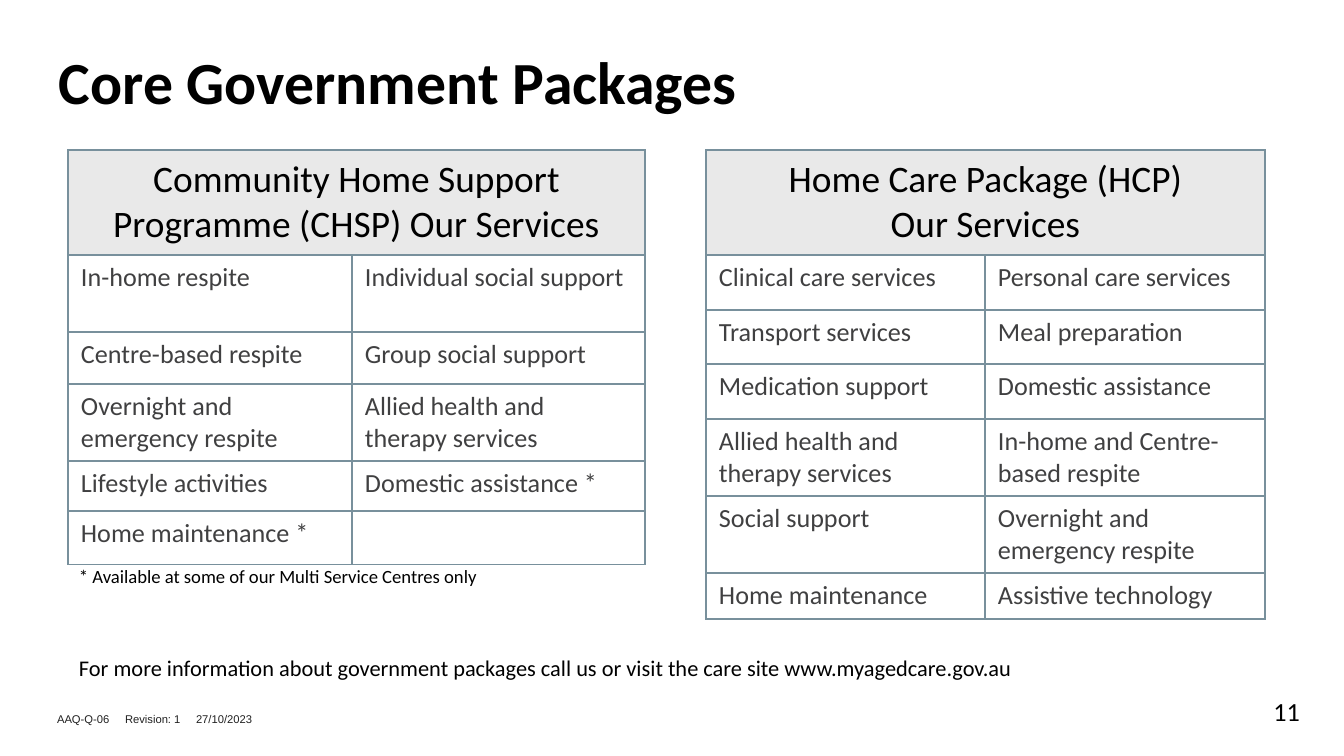
from lxml.etree import SubElement
from pptx import Presentation
from pptx.dml.color import RGBColor
from pptx.enum.text import PP_ALIGN
from pptx.oxml.ns import qn
from pptx.util import Pt

EMU_PER_PX = 914400 / 134.4
COLORS = {
    "black": "000000",
    "body": "404041",
    "footer": "212121",
    "header": "E9E9E9",
    "border": "78909C",
}
PAD, SLIM_PAD = 13, 7

CHSP_HEADER = "Community Home Support Programme (CHSP) Our Services"
CHSP_SERVICES = [
    ("In-home respite", "Individual social support"),
    ("Centre-based respite", "Group social support"),
    ("Overnight and emergency respite", "Allied health and\ntherapy services"),
    ("Lifestyle activities", "Domestic assistance *"),
    ("Home maintenance *", ""),
]
HCP_HEADER = "Home Care Package (HCP)\nOur Services"
HCP_SERVICES = [
    ("Clinical care services", "Personal care services"),
    ("Transport services", "Meal preparation"),
    ("Medication support", "Domestic assistance"),
    ("Allied health and therapy services", "In-home and Centre-based respite"),
    ("Social support", "Overnight and emergency respite"),
    ("Home maintenance", "Assistive technology"),
]


def px(length):
    return round(length * EMU_PER_PX)


def color(name):
    return RGBColor.from_string(COLORS[name])


def write(frame, text, size, ink="black", font="Calibri", bold=False,
          align=PP_ALIGN.LEFT, tabs=()):
    """Write one paragraph for each line of text."""
    for index, line in enumerate(text.split("\n")):
        paragraph = frame.paragraphs[0] if index == 0 else frame.add_paragraph()
        paragraph.alignment = align
        if tabs:
            tab_list = SubElement(paragraph._p.get_or_add_pPr(), qn("a:tabLst"))
            for stop in tabs:
                SubElement(tab_list, qn("a:tab"), pos=str(px(stop)), algn="l")
        run = paragraph.add_run()
        run.text = line
        run.font.name = font
        run.font.size = Pt(size)
        run.font.bold = bold
        run.font.color.rgb = color(ink)


def add_text(slide, box, text, size, pad=PAD, **style):
    frame = slide.shapes.add_textbox(*map(px, box)).text_frame
    frame.word_wrap = True
    frame.margin_left = frame.margin_right = px(PAD)
    frame.margin_top = frame.margin_bottom = px(pad)
    write(frame, text, size, **style)


def outline(cell):
    properties = cell._tc.get_or_add_tcPr()
    for position, side in enumerate(("a:lnL", "a:lnR", "a:lnT", "a:lnB")):
        line = properties.makeelement(qn(side), {"w": str(Pt(1))})
        fill = SubElement(line, qn("a:solidFill"))
        SubElement(fill, qn("a:srgbClr"), val=COLORS["border"])
        properties.insert(position, line)


def add_services(slide, left, top, widths, heights, header, services):
    table = slide.shapes.add_table(
        len(heights), len(widths), px(left), px(top),
        px(sum(widths)), px(sum(heights))).table
    table.first_row = table.horz_banding = False
    for column, width in zip(table.columns, widths):
        column.width = px(width)
    for row, height in zip(table.rows, heights):
        row.height = px(height)

    for cell in table.iter_cells():
        cell.fill.background()
        outline(cell)
        cell.margin_left = cell.margin_right = px(PAD)
        cell.margin_top = cell.margin_bottom = px(SLIM_PAD) - 2000

    # Header across both columns
    title = table.cell(0, 0)
    title.merge(table.cell(0, 1))
    title.fill.solid()
    title.fill.fore_color.rgb = color("header")
    write(title.text_frame, header, 20, align=PP_ALIGN.CENTER)

    # Services in pairs
    for row, pair in enumerate(services, start=1):
        for column, service in enumerate(pair):
            write(table.cell(row, column).text_frame, service, 14, ink="body")


def main():
    deck = Presentation()
    deck.slide_width, deck.slide_height = px(1344), px(756)
    slide = deck.slides.add_slide(deck.slide_layouts[6])

    # Title
    add_text(slide, (46, 32, 1252, 85), "Core Government Packages", 32, bold=True)

    # Package tables
    add_services(slide, 706, 150, (279, 280), (105, 55, 54, 55, 77, 77, 46),
                 HCP_HEADER, HCP_SERVICES)
    add_services(slide, 68, 150, (284, 293), (105, 77, 52, 77, 50, 50),
                 CHSP_HEADER, CHSP_SERVICES)

    # Notes under the tables
    add_text(slide, (66, 554, 590, 52),
             "* Available at some of our Multi Service Centres only", 10)
    add_text(slide, (66, 641, 1216, 52),
             "For more information about government packages call us or visit "
             "the care site www.myagedcare.gov.au", 12)

    # Footer and page number
    add_text(slide, (44, 706, 226, 28), "AAQ-Q-06\tRevision: 1\t27/10/2023", 6,
             pad=SLIM_PAD, ink="footer", font="Arial", tabs=(68, 139))
    add_text(slide, (1196, 688, 117, 51), "11", 14, pad=SLIM_PAD,
             align=PP_ALIGN.RIGHT)

    deck.save("out.pptx")


if __name__ == "__main__":
    main()
